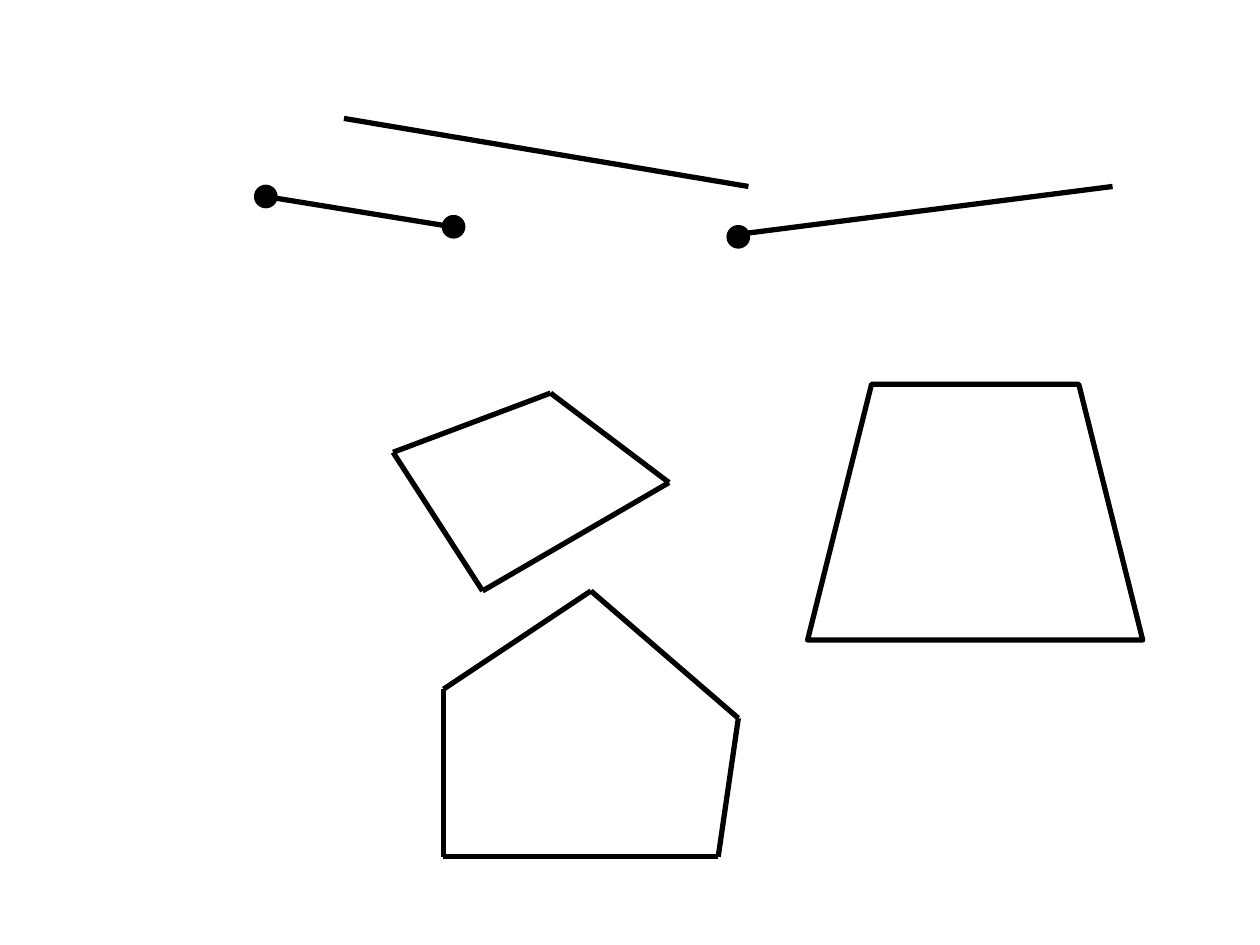
from itertools import pairwise

from lxml.etree import SubElement
from pptx import Presentation
from pptx.dml.color import RGBColor
from pptx.enum.shapes import MSO_CONNECTOR, MSO_SHAPE
from pptx.oxml.ns import qn
from pptx.util import Inches, Pt

HUES = {"ink": "000000", "page": "FFFFFF"}
INK = RGBColor.from_string(HUES["ink"])
PEN = {"width": Pt(3)}
RIM = {"width": Pt(2)}
DOT = 0.16

RAYS = [
    [(2.73, 0.94), (5.94, 1.48)],
    [(5.78, 1.87), (8.83, 1.48)],
    [(2.11, 1.56), (3.59, 1.8)],
]
DOTS = [(5.86, 1.88), (3.6, 1.8), (2.11, 1.56)]
KITE = [(3.83, 4.69), (3.12, 3.59), (4.37, 3.12), (5.31, 3.83)]
HOUSE = [(3.52, 5.47), (4.69, 4.69), (5.86, 5.7), (5.7, 6.8), (3.52, 6.8)]


def style(line, form):
    """Apply the ink colour and the format values to a line."""
    line.color.rgb = INK
    for name, value in form.items():
        setattr(line, name, value)


def add_path(slide, points):
    """Join successive points with straight lines."""
    for start, end in pairwise(points):
        ends = [Inches(v) for v in (*start, *end)]
        line = slide.shapes.add_connector(MSO_CONNECTOR.STRAIGHT, *ends)
        style(line.line, PEN)
        SubElement(line._element.spPr, qn("a:effectLst"))


def add_ring(slide, points):
    """Draw a closed figure out of separate sides."""
    add_path(slide, points + points[:1])


def add_form(slide, kind, box, pen):
    """Add an outlined preset shape without a shadow."""
    shape = slide.shapes.add_shape(kind, *[Inches(v) for v in box])
    shape.shadow.inherit = False
    shape.fill.background()
    style(shape.line, pen)
    return shape


def add_dot(slide, x, y):
    """Add a solid end point centred at x, y."""
    box = (x - DOT / 2, y - DOT / 2, DOT, DOT)
    dot = add_form(slide, MSO_SHAPE.OVAL, box, RIM)
    dot.fill.solid()
    dot.fill.fore_color.rgb = INK


def main():
    """Build and save the slide of lines and polygons."""
    deck = Presentation()
    deck.slide_width, deck.slide_height = Inches(10), Inches(7.5)
    slide = deck.slides.add_slide(deck.slide_layouts[6])
    back = slide.background.fill
    back.solid()
    back.fore_color.rgb = RGBColor.from_string(HUES["page"])
    for ray in RAYS:
        add_path(slide, ray)
    for x, y in DOTS:
        add_dot(slide, x, y)
    add_ring(slide, KITE)
    add_form(slide, MSO_SHAPE.TRAPEZOID, (6.41, 3.05, 2.66, 2.03), PEN)
    add_ring(slide, HOUSE)
    deck.save("out.pptx")


if __name__ == "__main__":
    main()
